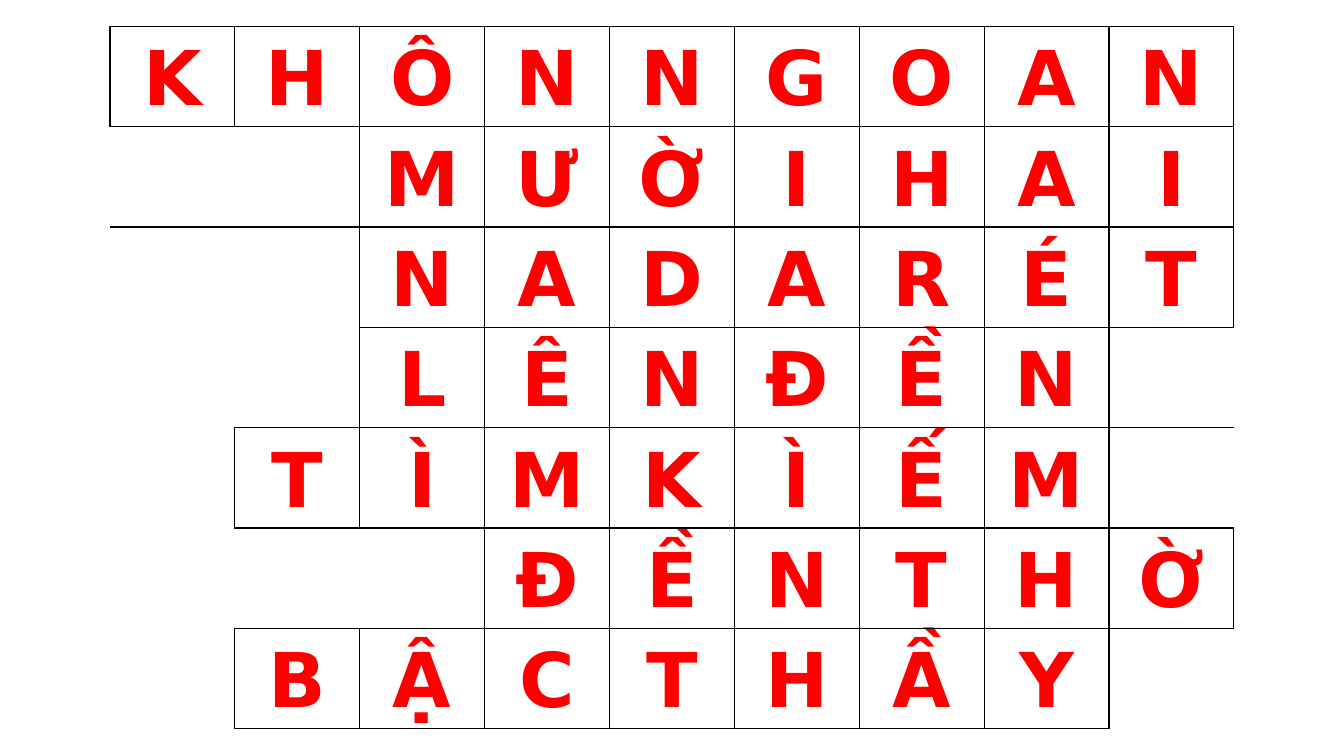
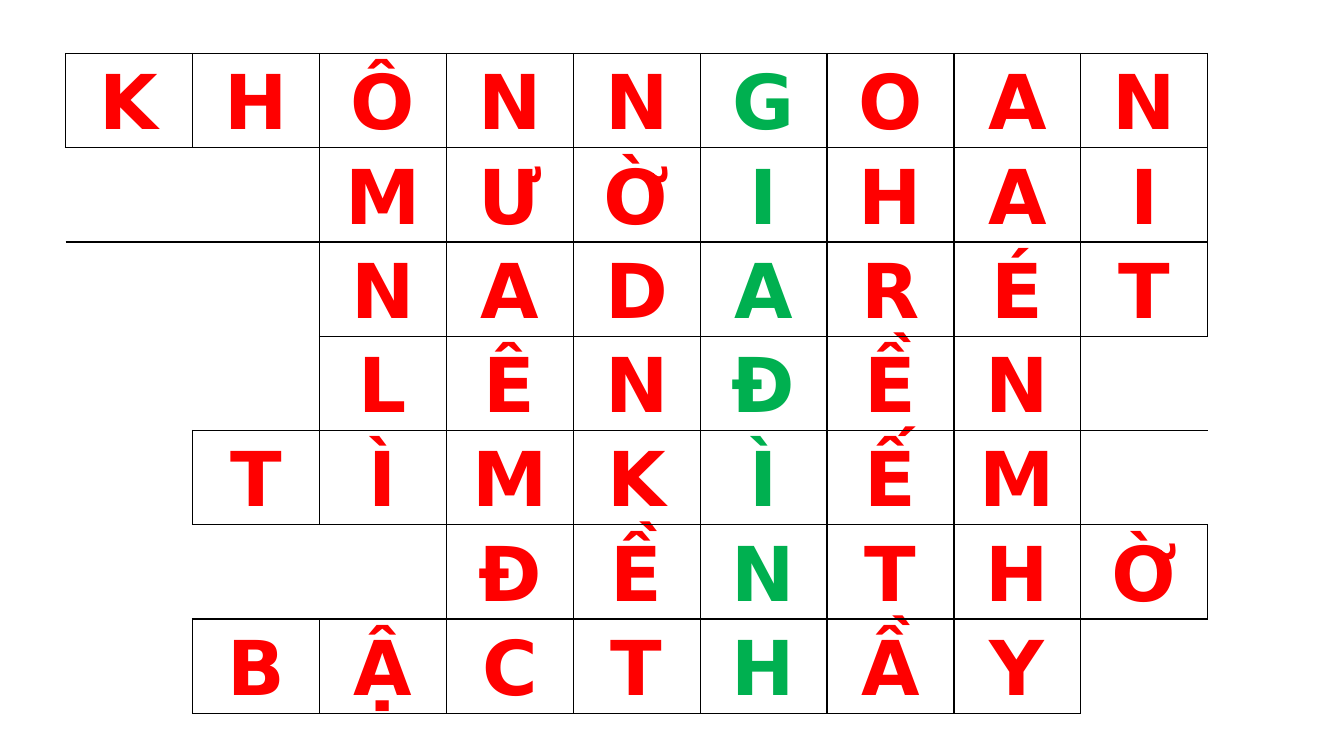
import pptx
import pptx.dml.color
import pptx.enum.text
import pptx.oxml
import pptx.oxml.ns
import pptx.util

RED = pptx.dml.color.RGBColor(0xFF, 0x00, 0x00)
GREEN = pptx.dml.color.RGBColor(0x00, 0xB0, 0x50)
WHITE = pptx.dml.color.RGBColor(0xFF, 0xFF, 0xFF)
BLACK = pptx.dml.color.RGBColor(0x00, 0x00, 0x00)

BLANK = "."
ANSWERS = [
    "KHÔNNGOAN",
    "..MƯỜIHAI",
    "..NADARÉT",
    "..LÊNĐỀN.",
    ".TÌMKÌẾM.",
    "...ĐỀNTHỜ",
    ".BẬCTHẦY.",
]
KEY_COLUMN = 5
PLAIN_TABLE_STYLE = "{2D5ABB26-0587-4C30-8999-92F81FD0307C}"
SIDES = {"L": (0, -1), "R": (0, 1), "T": (-1, 0), "B": (1, 0)}


class Deck:
    font = "DejaVu Sans"
    size = pptx.util.Pt(54)
    rule = pptx.util.Pt(1)

    def __init__(self):
        self.prs = pptx.Presentation()
        self.prs.slide_width = pptx.util.Inches(13.33)
        self.prs.slide_height = pptx.util.Inches(7.5)
        self.s = None

    def slide(self):
        self.s = self.prs.slides.add_slide(self.prs.slide_layouts[6])

    def crossword(self, left, top, width, height, answers, key_column=None):
        """Draw the answers as a table; lengths are percentages of the slide."""
        rows, cols = len(answers), len(answers[0])
        x, w = (int(self.prs.slide_width * v / 100) for v in (left, width))
        y, h = (int(self.prs.slide_height * v / 100) for v in (top, height))
        table = self.s.shapes.add_table(rows, cols, x, y, w, h).table
        table.first_row = table.horz_banding = False
        style = table._tbl.tblPr.find(pptx.oxml.ns.qn("a:tableStyleId"))
        style.text = PLAIN_TABLE_STYLE

        def has_letter(r, c):
            return 0 <= r < rows and 0 <= c < cols and answers[r][c] != BLANK

        for r, answer in enumerate(answers):
            for c, letter in enumerate(answer):
                cell = table.cell(r, c)
                for side, (dr, dc) in SIDES.items():
                    if has_letter(r, c) or has_letter(r + dr, c + dc):
                        self.border(cell, side)
                if has_letter(r, c):
                    self.letter(cell, letter, GREEN if c == key_column else RED)
                else:
                    cell.fill.background()

    def border(self, cell, side):
        """Rule one side of a cell; call before the cell is filled."""
        ns = pptx.oxml.ns.nsdecls("a")
        cell._tc.get_or_add_tcPr().append(pptx.oxml.parse_xml(
            f'<a:ln{side} {ns} w="{self.rule}"><a:solidFill>'
            f'<a:srgbClr val="{BLACK}"/></a:solidFill></a:ln{side}>'))

    def letter(self, cell, text, color):
        cell.fill.solid()
        cell.fill.fore_color.rgb = WHITE
        cell.vertical_anchor = pptx.enum.text.MSO_ANCHOR.MIDDLE
        cell.margin_left = cell.margin_right = pptx.util.Inches(0.07)
        cell.margin_top = cell.margin_bottom = 0
        p = cell.text_frame.paragraphs[0]
        p.alignment = pptx.enum.text.PP_ALIGN.CENTER
        p.line_spacing = 1.07
        p.space_after = pptx.util.Pt(8)
        run = p.add_run()
        run.text = text
        run.font.name = self.font
        run.font.size = self.size
        run.font.bold = True
        run.font.color.rgb = color


def main():
    deck = Deck()
    deck.slide()
    deck.crossword(8.18, 3.47, 83.65, 92.93, ANSWERS)
    deck.slide()
    deck.crossword(4.88, 7.07, 85, 86.93, ANSWERS, KEY_COLUMN)
    deck.prs.save("out.pptx")


if __name__ == "__main__":
    main()
